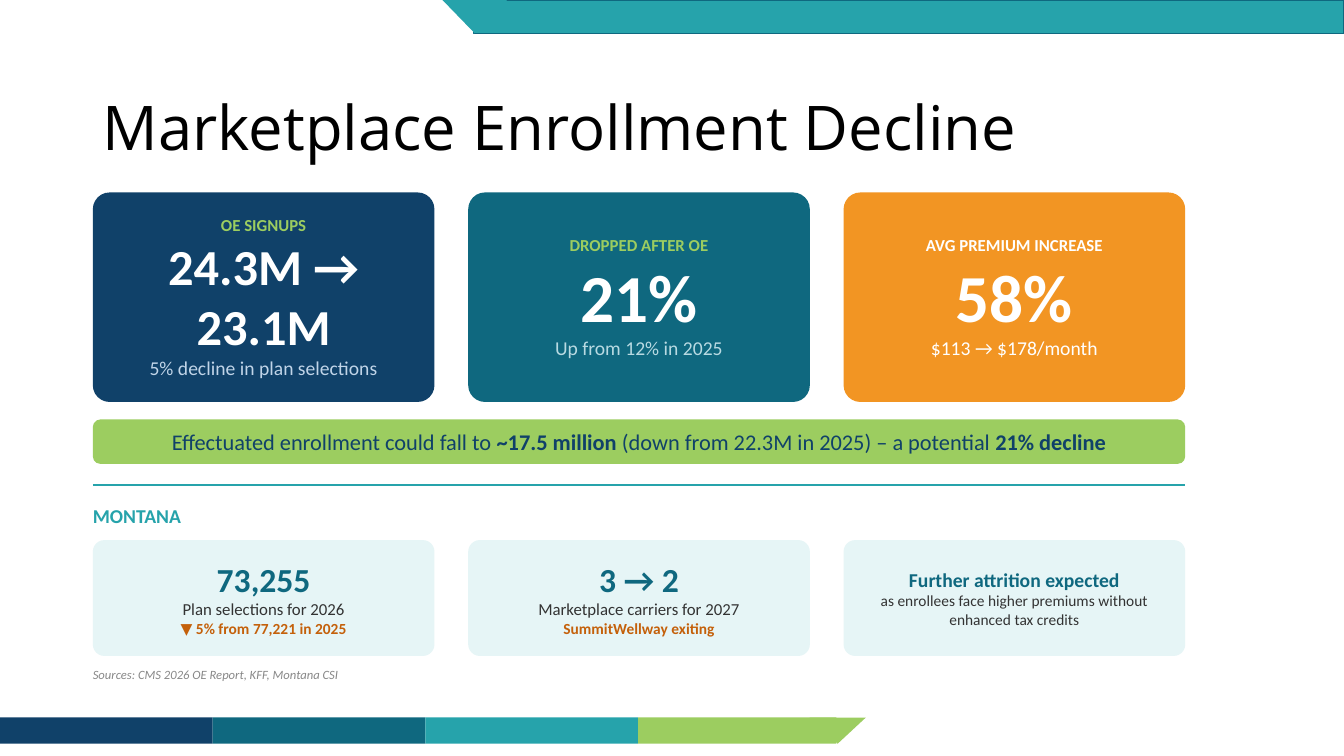
from dataclasses import dataclass

import pptx
import pptx.dml.color
import pptx.enum.shapes
import pptx.enum.text
import pptx.oxml
import pptx.oxml.ns
import pptx.util

Cm = pptx.util.Cm
Pt = pptx.util.Pt
RGBColor = pptx.dml.color.RGBColor
Preset = pptx.enum.shapes.MSO_SHAPE
Align = pptx.enum.text.PP_ALIGN
Anchor = pptx.enum.text.MSO_ANCHOR

BLACK = RGBColor(0x00, 0x00, 0x00)
WHITE = RGBColor(0xFF, 0xFF, 0xFF)
NAVY = RGBColor(0x10, 0x41, 0x69)
PETROL = RGBColor(0x0F, 0x68, 0x7F)
TEAL = RGBColor(0x26, 0xA3, 0xAB)
GREEN = RGBColor(0x9C, 0xCD, 0x60)
ORANGE = RGBColor(0xF2, 0x95, 0x23)
RUST = RGBColor(0xC4, 0x60, 0x0A)
MINT = RGBColor(0xE6, 0xF5, 0xF6)
PALE_BLUE = RGBColor(0xC0, 0xD4, 0xE8)
PALE_TEAL = RGBColor(0xB8, 0xDA, 0xE2)
CHARCOAL = RGBColor(0x33, 0x33, 0x33)
GRAY = RGBColor(0x88, 0x88, 0x88)

LEFT = 2.34
CARD_WIDTH = 8.61
CARD_PITCH = 9.46
CONTENT_WIDTH = 2 * CARD_PITCH + CARD_WIDTH
FOOTER_TOP = 18.08
FOOTER_HEIGHT = 0.66
FOOTER_STEP = 5.36
HEADER_HEIGHT = 0.84


@dataclass(frozen=True)
class Area:
    """Left, top, width and height in centimetres."""
    left: float
    top: float
    width: float
    height: float

    def lengths(self) -> list:
        return [Cm(value) for value in (self.left, self.top, self.width, self.height)]


@dataclass(frozen=True)
class Span:
    text: str
    size: float
    color: RGBColor
    bold: bool = False
    italic: bool = False
    font: str = "Calibri"


@dataclass(frozen=True)
class Card:
    fill: RGBColor
    lines: list[Span]


@dataclass(frozen=True)
class CardRow:
    top: float
    height: float
    corner: float
    margins: tuple[float, float]
    cards: list[Card]


CARD_ROWS = [
    CardRow(4.85, 5.28, 0.08, (0.51, 0.38), [
        Card(NAVY, [Span("OE SIGNUPS", 12, GREEN, True),
                    Span("24.3M → 23.1M", 36, WHITE, True),
                    Span("5% decline in plan selections", 14, PALE_BLUE)]),
        Card(PETROL, [Span("DROPPED AFTER OE", 12, GREEN, True),
                      Span("21%", 48, WHITE, True),
                      Span("Up from 12% in 2025", 14, PALE_TEAL)]),
        Card(ORANGE, [Span("AVG PREMIUM INCREASE", 12, WHITE, True),
                      Span("58%", 48, WHITE, True),
                      Span("$113 → $178/month", 14, WHITE)]),
    ]),
    CardRow(13.61, 2.92, 0.1, (0.43, 0.25), [
        Card(MINT, [Span("73,255", 24, PETROL, True),
                    Span("Plan selections for 2026", 12, CHARCOAL),
                    Span("▼ 5% from 77,221 in 2025", 11, RUST, True)]),
        Card(MINT, [Span("3 → 2", 24, PETROL, True),
                    Span("Marketplace carriers for 2027", 12, CHARCOAL),
                    Span("SummitWellway exiting", 11, RUST, True)]),
        Card(MINT, [Span("Further attrition expected", 14, PETROL, True),
                    Span("as enrollees face higher premiums without enhanced tax credits",
                         11, CHARCOAL)]),
    ]),
]

BANNER = [
    Span("Effectuated enrollment could fall to ", 16, NAVY),
    Span("~17.5 million", 16, NAVY, True),
    Span(" (down from 22.3M in 2025) – a potential ", 16, NAVY),
    Span("21% decline", 16, NAVY, True),
]


def add_block(page, preset, area: Area, fill: RGBColor, corner: float | None = None):
    shape = page.shapes.add_shape(preset, *area.lengths())
    shape.shadow.inherit = False
    shape.fill.solid()
    shape.fill.fore_color.rgb = fill
    shape.line.fill.background()
    if corner is not None:
        shape.adjustments[0] = corner
    return shape


def write(box, paragraphs: list[list[Span]], margins: tuple[float, float] = (0, 0),
          align=Align.CENTER, anchor=Anchor.MIDDLE) -> None:
    """Fill a shape with paragraphs; margins are horizontal and vertical."""
    frame = box.text_frame
    frame.word_wrap = True
    frame.vertical_anchor = anchor
    frame.margin_left = frame.margin_right = Cm(margins[0])
    frame.margin_top = frame.margin_bottom = Cm(margins[1])
    for index, spans in enumerate(paragraphs):
        para = frame.add_paragraph() if index else frame.paragraphs[0]
        para.alignment = align
        for span in spans:
            run = para.add_run()
            run.text = span.text
            run.font.name = span.font
            run.font.size = Pt(span.size)
            run.font.bold = span.bold
            run.font.italic = span.italic
            run.font.color.rgb = span.color


def add_label(page, area: Area, span: Span, margins: tuple[float, float] = (0, 0),
              anchor=Anchor.MIDDLE):
    box = page.shapes.add_textbox(*area.lengths())
    write(box, [[span]], margins, Align.LEFT, anchor)
    return box


def add_ribbons(page) -> None:
    """Draw the coloured bands at the foot and head of the page."""
    for index, color in enumerate((NAVY, PETROL, TEAL, GREEN)):
        width = 5.0 if color == GREEN else FOOTER_STEP
        add_block(page, Preset.RECTANGLE,
                  Area(index * FOOTER_STEP, FOOTER_TOP, width, FOOTER_HEIGHT), color)
    header = add_block(page, Preset.RECTANGLE, Area(11.94, 0, 21.93, HEADER_HEIGHT), TEAL)
    header.line.color.rgb = PETROL
    header.line.width = Pt(1)
    for area, color in ((Area(20.4, FOOTER_TOP, 1.42, FOOTER_HEIGHT), GREEN),
                        (Area(11.15, 0, 1.63, HEADER_HEIGHT), TEAL)):
        add_block(page, Preset.ISOSCELES_TRIANGLE, area, color).rotation = 180


def add_card_row(page, row: CardRow) -> None:
    for index, card in enumerate(row.cards):
        area = Area(LEFT + index * CARD_PITCH, row.top, CARD_WIDTH, row.height)
        box = add_block(page, Preset.ROUNDED_RECTANGLE, area, card.fill, row.corner)
        write(box, [[span] for span in card.lines], row.margins)


def add_divider(page, top: float) -> None:
    line = page.shapes.add_connector(
        pptx.enum.shapes.MSO_CONNECTOR.STRAIGHT,
        Cm(LEFT), Cm(top), Cm(LEFT + CONTENT_WIDTH), Cm(top))
    line.line.color.rgb = TEAL
    line.line.width = Pt(1.5)
    properties = line.element.find(pptx.oxml.ns.qn("p:spPr"))
    properties.append(pptx.oxml.parse_xml(
        f"<a:effectLst {pptx.oxml.ns.nsdecls('a')}/>"))


def main() -> None:
    deck = pptx.Presentation()
    deck.slide_width = Cm(33.87)
    deck.slide_height = Cm(19.05)
    page = deck.slides.add_slide(deck.slide_layouts[6])

    add_ribbons(page)
    title = add_label(page, Area(LEFT, 1.45, 29.21, 3.68),
                      Span("Marketplace Enrollment Decline", 44, BLACK, font="Open Sans"),
                      (0.25, 0.13))
    title.text_frame.paragraphs[0].line_spacing = 0.9

    headline_row, montana_row = CARD_ROWS
    add_card_row(page, headline_row)
    banner = add_block(page, Preset.ROUNDED_RECTANGLE,
                       Area(LEFT, 10.57, CONTENT_WIDTH, 1.12), GREEN, 0.17)
    write(banner, [BANNER], (0.51, 0.13))
    add_divider(page, 12.22)
    add_label(page, Area(LEFT, 12.5, 6.93, 0.97), Span("MONTANA", 14, TEAL, True))
    add_card_row(page, montana_row)
    add_label(page, Area(LEFT, 16.81, 16.66, 0.69),
              Span("Sources: CMS 2026 OE Report, KFF, Montana CSI", 9, GRAY, italic=True),
              anchor=Anchor.TOP)

    deck.save("out.pptx")


if __name__ == "__main__":
    main()
